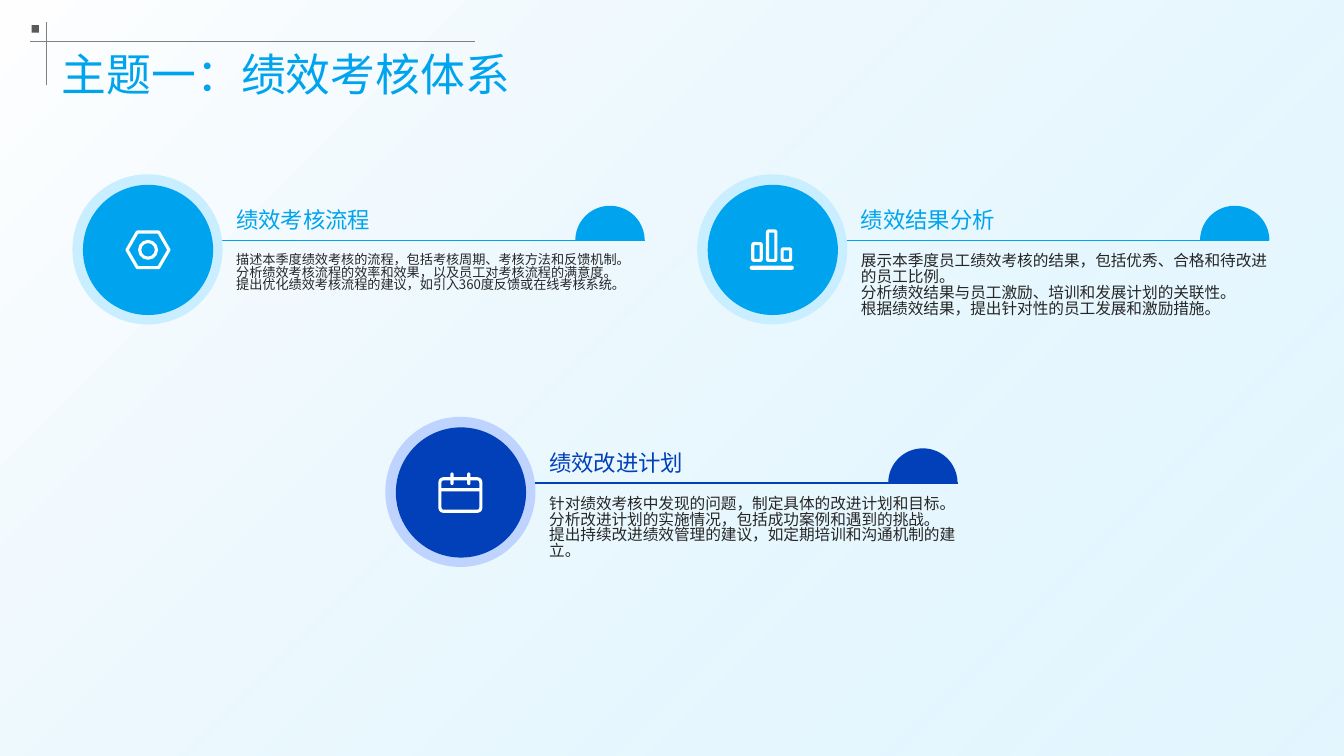
import math
from dataclasses import dataclass
from typing import Optional

import pptx
import pptx.dml.color
import pptx.enum.shapes
import pptx.enum.text
import pptx.oxml.ns
import pptx.util
from lxml import etree

PX = 9525  # EMU per px
SLIDE_W, SLIDE_H = 1280, 720
Preset = pptx.enum.shapes.MSO_SHAPE
Anchor = pptx.enum.text.MSO_ANCHOR


@dataclass(frozen=True)
class Style:
    size: float
    spacing: Optional[float] = None


@dataclass(frozen=True)
class Theme:
    font: str = "Noto Sans CJK SC"
    white: str = "FFFFFF"
    sky: str = "00A4EE"
    pale_sky: str = "C9EEFF"
    navy: str = "0140B8"
    pale_navy: str = "BED4FF"
    ink: str = "262626"
    rule: str = "808080"
    marker: str = "595959"
    title: Style = Style(32)
    heading: Style = Style(16)
    body: Style = Style(11.2, 0.84)
    compact_body: Style = Style(9.4, 0.81)
    topic_line: float = 1
    header_line: float = 0.5
    icon_line: float = 2.25


THEME = Theme()


@dataclass(frozen=True)
class Box:
    left: int
    top: int
    width: int
    height: int

    def moved(self, dx: int, dy: int) -> "Box":
        return Box(self.left + dx, self.top + dy, self.width, self.height)

    def emu(self) -> list[int]:
        return [v * PX for v in (self.left, self.top, self.width, self.height)]


@dataclass(frozen=True)
class IconPart:
    preset: Preset
    box: Box  # relative to the topic's ring
    corner: Optional[float] = None
    solid: bool = False


@dataclass(frozen=True)
class Topic:
    left: int
    top: int
    color: str
    ring: str
    heading: str
    points: tuple[str, ...]
    body: Style
    icon: tuple[IconPart, ...]


# Icons
NUT = (
    IconPart(Preset.HEXAGON, Box(52, 55, 40, 34), 0.29),
    IconPart(Preset.OVAL, Box(64, 64, 16, 16)),
)
BARS = tuple(
    IconPart(Preset.ROUNDED_RECTANGLE, Box(53 + 14 * i, 82 - height, 8, height), 0.15)
    for i, height in enumerate((16, 28, 11))
) + (IconPart(Preset.ROUNDED_RECTANGLE, Box(50, 87, 42, 4), 0.5, True),)
CALENDAR = (
    IconPart(Preset.ROUNDED_RECTANGLE, Box(52, 59, 39, 31), 0.11),
    IconPart(Preset.RECTANGLE, Box(52, 68, 39, 3), None, True),
) + tuple(
    IconPart(Preset.ROUNDED_RECTANGLE, Box(x, 53, 3, 12), 0.5, True) for x in (62, 78)
)

TOPICS = (
    Topic(69, 166, THEME.sky, THEME.pale_sky, "绩效考核流程", (
        "描述本季度绩效考核的流程，包括考核周期、考核方法和反馈机制。",
        "分析绩效考核流程的效率和效果，以及员工对考核流程的满意度。",
        "提出优化绩效考核流程的建议，如引入360度反馈或在线考核系统。",
    ), THEME.compact_body, NUT),
    Topic(664, 166, THEME.sky, THEME.pale_sky, "绩效结果分析", (
        "展示本季度员工绩效考核的结果，包括优秀、合格和待改进的员工比例。",
        "分析绩效结果与员工激励、培训和发展计划的关联性。",
        "根据绩效结果，提出针对性的员工发展和激励措施。",
    ), THEME.body, BARS),
    Topic(367, 397, THEME.navy, THEME.pale_navy, "绩效改进计划", (
        "针对绩效考核中发现的问题，制定具体的改进计划和目标。",
        "分析改进计划的实施情况，包括成功案例和遇到的挑战。",
        "提出持续改进绩效管理的建议，如定期培训和沟通机制的建立。",
    ), THEME.body, CALENDAR),
)


def rgb(color: str) -> pptx.dml.color.RGBColor:
    return pptx.dml.color.RGBColor.from_string(color)


def paint(shape, color: str) -> None:
    shape.shadow.inherit = False
    shape.fill.solid()
    shape.fill.fore_color.rgb = rgb(color)
    shape.line.fill.background()


def add_solid(shapes, preset: Preset, box: Box, color: str):
    shape = shapes.add_shape(preset, *box.emu())
    paint(shape, color)
    return shape


def add_rule(shapes, x1: int, y1: int, x2: int, y2: int, color: str, width: float) -> None:
    rule = shapes.add_connector(pptx.enum.shapes.MSO_CONNECTOR.STRAIGHT,
                                x1 * PX, y1 * PX, x2 * PX, y2 * PX)
    rule.line.color.rgb = rgb(color)
    rule.line.width = pptx.util.Pt(width)
    etree.SubElement(rule._element.spPr, pptx.oxml.ns.qn("a:effectLst"))


def add_text(shapes, box: Box, lines: tuple[str, ...], style: Style, color: str,
             anchor: Anchor = Anchor.TOP) -> None:
    frame = shapes.add_textbox(*box.emu()).text_frame
    frame.word_wrap = True
    frame.vertical_anchor = anchor
    frame.margin_left = frame.margin_right = frame.margin_top = frame.margin_bottom = 0
    for i, line in enumerate(lines):
        paragraph = frame.add_paragraph() if i else frame.paragraphs[0]
        if style.spacing:
            paragraph.line_spacing = style.spacing
        run = paragraph.add_run()
        run.text = line
        run.font.size = pptx.util.Pt(style.size)
        run.font.color.rgb = rgb(color)
        run.font.name = THEME.font
        etree.SubElement(run._r.rPr, pptx.oxml.ns.qn("a:ea"), typeface=THEME.font)


def add_dome(shapes, center: int, base: int, radius: int, color: str) -> None:
    arc = [((center - radius * math.cos(math.radians(a))) * PX,
            (base - radius * math.sin(math.radians(a))) * PX) for a in range(0, 181, 3)]
    outline = shapes.build_freeform(*arc[0], scale=1.0)
    outline.add_line_segments(arc[1:], close=True)
    paint(outline.convert_to_shape(), color)


def add_icon_part(shapes, part: IconPart, left: int, top: int) -> None:
    shape = add_solid(shapes, part.preset, part.box.moved(left, top), THEME.white)
    if part.corner is not None:
        shape.adjustments[0] = part.corner
    if not part.solid:
        shape.fill.background()
        shape.line.color.rgb = rgb(THEME.white)
        shape.line.width = pptx.util.Pt(THEME.icon_line)


def add_topic(shapes, topic: Topic) -> None:
    x, y = topic.left, topic.top
    base = y + 63
    add_rule(shapes, x + 129, base, x + 545, base, topic.color, THEME.topic_line)
    add_solid(shapes, Preset.OVAL, Box(x, y, 143, 143), topic.ring)
    add_text(shapes, Box(x + 156, y + 76, 390, 119), topic.points, topic.body, THEME.ink)
    add_text(shapes, Box(x + 156, y - 24, 311, 80), (topic.heading,), THEME.heading,
             topic.color, Anchor.BOTTOM)
    add_dome(shapes, x + 512, base, 33, topic.color)
    add_solid(shapes, Preset.OVAL, Box(x + 10, y + 10, 124, 124), topic.color)
    for part in topic.icon:
        add_icon_part(shapes, part, x, y)


def add_backdrop(shapes) -> None:
    backdrop = add_solid(shapes, Preset.RECTANGLE, Box(0, 0, SLIDE_W, SLIDE_H), THEME.white)
    backdrop.fill.gradient()
    backdrop.fill.gradient_angle = 315
    for stop, color in zip(backdrop.fill.gradient_stops, (THEME.white, THEME.pale_sky)):
        stop.color.rgb = rgb(color)
    end_color = list(backdrop._element.spPr.iter(pptx.oxml.ns.qn("a:srgbClr")))[-1]
    etree.SubElement(end_color, pptx.oxml.ns.qn("a:alpha"), val="50000")


def add_header(shapes) -> None:
    add_rule(shapes, 29, 39, 452, 39, THEME.rule, THEME.header_line)
    add_text(shapes, Box(59, 48, 1156, 45), ("主题一：绩效考核体系",), THEME.title,
             THEME.sky, Anchor.MIDDLE)
    add_solid(shapes, Preset.RECTANGLE, Box(30, 24, 7, 7), THEME.marker)
    add_rule(shapes, 44, 81, 44, 21, THEME.rule, THEME.header_line)


def main() -> None:
    deck = pptx.Presentation()
    deck.slide_width, deck.slide_height = SLIDE_W * PX, SLIDE_H * PX
    shapes = deck.slides.add_slide(deck.slide_layouts[6]).shapes
    add_backdrop(shapes)
    for topic in TOPICS:
        add_topic(shapes, topic)
    add_header(shapes)
    deck.save("out.pptx")


if __name__ == "__main__":
    main()
